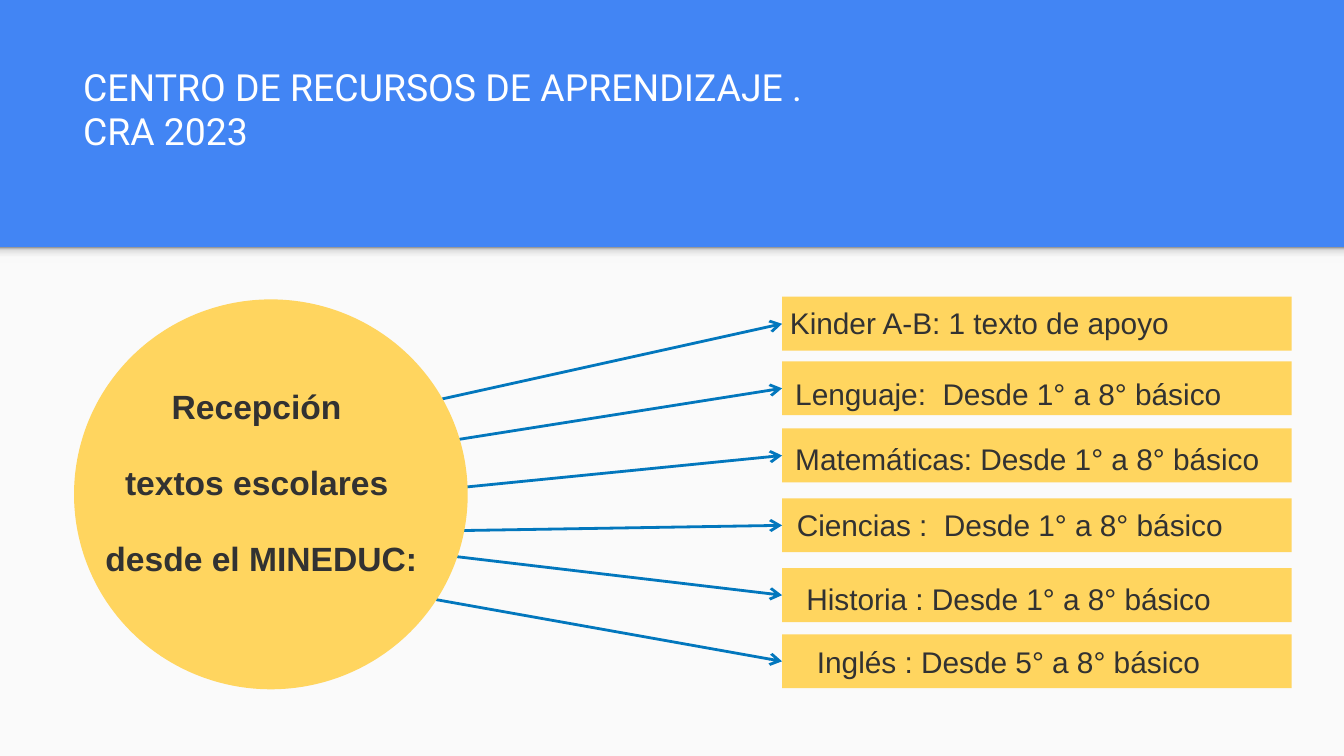
from lxml import etree
from pptx import Presentation
from pptx.dml.color import RGBColor
from pptx.enum.shapes import MSO_CONNECTOR, MSO_SHAPE
from pptx.enum.text import MSO_ANCHOR, PP_ALIGN
from pptx.oxml.ns import qn
from pptx.util import Cm, Pt

RECTANGLE, OVAL = MSO_SHAPE.RECTANGLE, MSO_SHAPE.OVAL
STRAIGHT = MSO_CONNECTOR.STRAIGHT
TOP, BOTTOM = MSO_ANCHOR.TOP, MSO_ANCHOR.BOTTOM
LEFT, CENTER = PP_ALIGN.LEFT, PP_ALIGN.CENTER
LEFT_SIDE = 1

BLUE = RGBColor(0x42, 0x85, 0xF4)
PAPER = RGBColor(0xFA, 0xFA, 0xFA)
YELLOW = RGBColor(0xFF, 0xD5, 0x5F)
ARROW_BLUE = RGBColor(0x02, 0x77, 0xBD)
INK = RGBColor(0x32, 0x32, 0x32)
WHITE = RGBColor(0xFF, 0xFF, 0xFF)

WIDTH, HEIGHT, BANNER_HEIGHT = 25.4, 14.29, 4.67
SHADOW_STOPS = [(0, "F9F9F9"), (36, "F9F9F9"), (80, "DEDEDE"), (100, "999999")]

TITLE_FONT = {"name": "Roboto", "size": Pt(20)}
CIRCLE_FONT = {"name": "Arial", "size": Pt(18), "bold": True}
LABEL_FONT = {"name": "Arial", "size": Pt(16)}
BODY_SPACING = {"line_spacing": 1.15, "space_after": Pt(16)}

BOX_LEFT, BOX_WIDTH, BOX_HEIGHT = 14.78, 9.63, 1.02
# Box top, arrow start, label, label position (left, top, width, height)
SUBJECTS = [
    (5.61, (8.36, 7.54), "Kinder A-B: 1 texto de apoyo", (14.68, 5.41, 7.77, 1.27)),
    (6.83, (8.64, 8.31), "Lenguaje:  Desde 1° a 8° básico", (14.78, 6.76, 8.76, 1.04)),
    (8.1, (8.36, 9.25), "Matemáticas: Desde 1° a 8° básico", (14.78, 7.98, 9.32, 1.12)),
    (9.42, (8.64, 10.03), "Ciencias :  Desde 1° a 8° básico", (14.81, 9.22, 8.76, 1.19)),
    (10.74, (8.36, 10.49), "Historia : Desde 1° a 8° básico", (14.99, 10.62, 8.94, 1.09)),
    (11.99, (8.05, 11.3), "Inglés : Desde 5° a 8° básico", (15.19, 11.81, 8, 1.19)),
]


class SlideBuilder:
    def __init__(self, slide, inset=0.25, line_width=1.5):
        self.slide = slide
        self.inset = Cm(inset)
        self.line_width = Pt(line_width)

    def shape(self, kind, position, color):
        shape = self.slide.shapes.add_shape(kind, *map(Cm, position))
        shape.shadow.inherit = False
        shape.fill.solid()
        shape.fill.fore_color.rgb = color
        shape.line.fill.background()
        return shape

    def gradient(self, position, stops):
        shape = self.shape(RECTANGLE, position, PAPER)
        properties = shape.fill._xPr
        gradient = etree.Element(qn("a:gradFill"))
        stop_list = etree.SubElement(gradient, qn("a:gsLst"))
        for percent, color in stops:
            stop = etree.SubElement(stop_list, qn("a:gs"), pos=str(percent * 1000))
            etree.SubElement(stop, qn("a:srgbClr"), val=color)
        etree.SubElement(gradient, qn("a:lin"), ang=str(270 * 60000), scaled="0")
        properties.replace(properties.find(qn("a:solidFill")), gradient)

    def text(self, position, lines, font, color, align=LEFT, anchor=TOP, spacing=BODY_SPACING):
        frame = self.slide.shapes.add_textbox(*map(Cm, position)).text_frame
        frame.word_wrap = True
        frame.vertical_anchor = anchor
        for side in ("left", "top", "right", "bottom"):
            setattr(frame, f"margin_{side}", self.inset)
        for index, line in enumerate(lines):
            paragraph = frame.add_paragraph() if index else frame.paragraphs[0]
            paragraph.text = line
            paragraph.alignment = align
            for name, value in spacing.items():
                setattr(paragraph, name, value)
            for run in paragraph.runs:
                run.font.color.rgb = color
                for name, value in font.items():
                    setattr(run.font, name, value)

    def arrow(self, start, target):
        x, y = map(Cm, start)
        connector = self.slide.shapes.add_connector(STRAIGHT, x, y, x, y)
        connector.end_connect(target, LEFT_SIDE)
        connector.line.color.rgb = ARROW_BLUE
        connector.line.width = self.line_width
        etree.SubElement(connector.line._get_or_add_ln(), qn("a:tailEnd"), type="arrow")
        etree.SubElement(connector._element.spPr, qn("a:effectLst"))


def main():
    presentation = Presentation()
    presentation.slide_width, presentation.slide_height = Cm(WIDTH), Cm(HEIGHT)
    slide = presentation.slides.add_slide(presentation.slide_layouts[6])
    builder = SlideBuilder(slide)

    # Blue banner, light content area and the soft shadow between them
    slide.background.fill.solid()
    slide.background.fill.fore_color.rgb = BLUE
    builder.shape(RECTANGLE, (0, BANNER_HEIGHT, WIDTH, HEIGHT - BANNER_HEIGHT), PAPER)
    builder.gradient((0, BANNER_HEIGHT, WIDTH, 0.3), SHADOW_STOPS)

    # Title
    builder.text((1.32, 0.89, 22.83, 2.26), ["CENTRO DE RECURSOS DE APRENDIZAJE .\vCRA 2023"],
                 TITLE_FONT, WHITE, anchor=BOTTOM, spacing={})

    # Subject boxes with their arrows and labels
    for top, start, label, label_position in SUBJECTS:
        box = builder.shape(RECTANGLE, (BOX_LEFT, top, BOX_WIDTH, BOX_HEIGHT), YELLOW)
        builder.arrow(start, box)
        builder.text(label_position, [label], LABEL_FONT, INK)

    # Circle covering the arrow starts
    builder.shape(OVAL, (1.4, 5.66, 7.44, 7.37), YELLOW)
    builder.text((0.99, 6.93, 7.9, 2.95),
                 ["Recepción ", "textos escolares ", "desde el MINEDUC:"],
                 CIRCLE_FONT, INK, align=CENTER)

    presentation.save("out.pptx")


if __name__ == "__main__":
    main()
